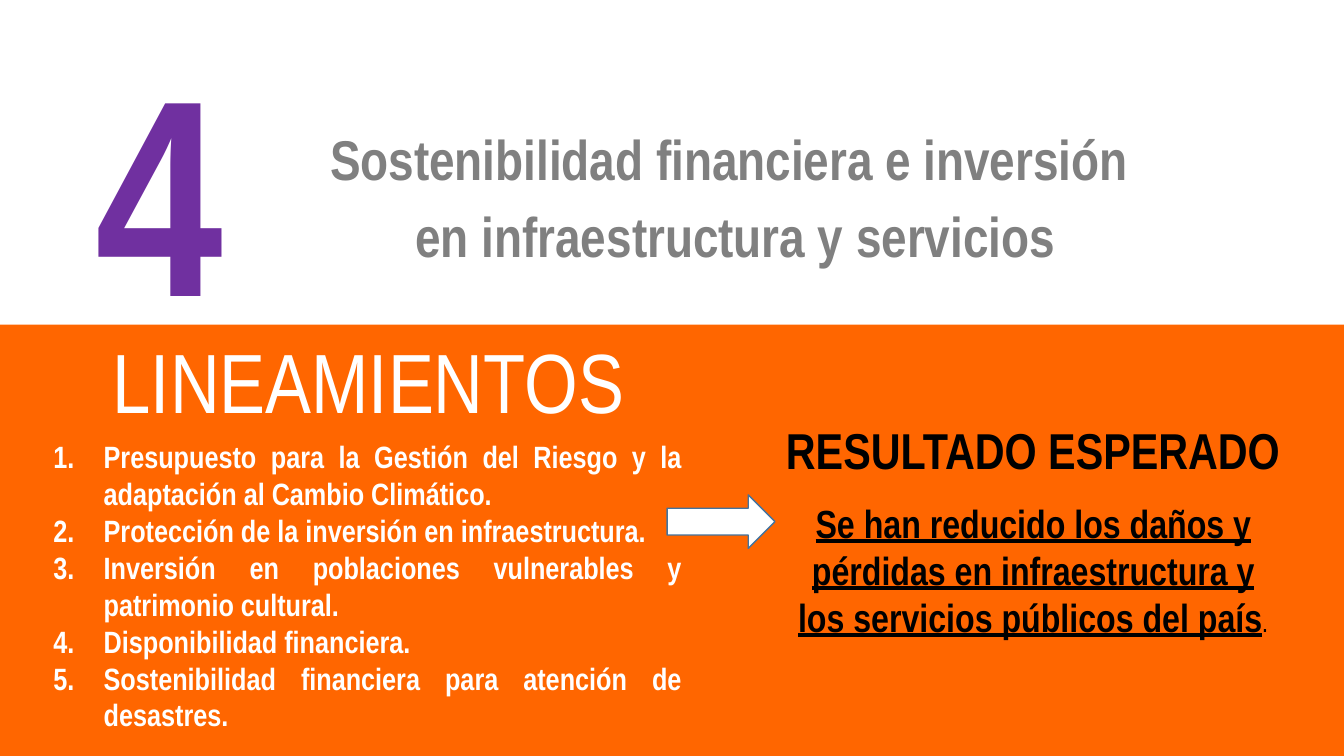
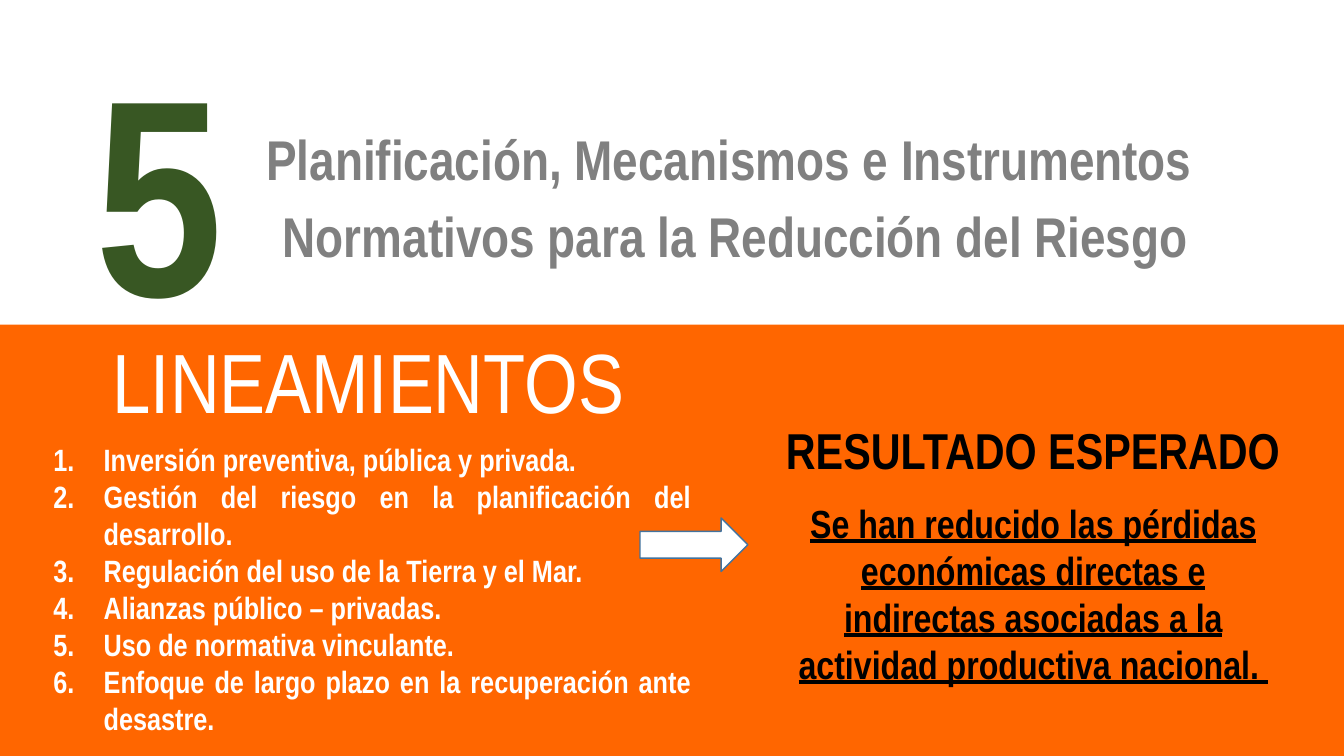
from lxml import etree
from pptx import Presentation
from pptx.dml.color import RGBColor
from pptx.enum.shapes import MSO_SHAPE
from pptx.enum.text import PP_ALIGN
from pptx.oxml.ns import qn
from pptx.util import Pt

RECT = MSO_SHAPE.RECTANGLE
ARROW = MSO_SHAPE.RIGHT_ARROW
LEFT, CENTER, JUSTIFY = PP_ALIGN.LEFT, PP_ALIGN.CENTER, PP_ALIGN.JUSTIFY
FONT = "Arial Narrow"
WHITE, BLACK, GRAY = "FFFFFF", "000000", "808080"
ORANGE, BLUE = "FF6600", "43739E"
WIDE, HIGH, SPLIT = 960, 540, 232

SLIDES = [
    {
        "digit": "4",
        "color": "7030A0",
        "title": ["Sostenibilidad financiera e inversión ",
                  "en infraestructura y servicios"],
        "width": 600,
        "items": ["Presupuesto para la Gestión del Riesgo y la adaptación al Cambio Climático.",
                  "Protección de la inversión en infraestructura.",
                  "Inversión en poblaciones vulnerables y patrimonio cultural.",
                  "Disponibilidad financiera.",
                  "Sostenibilidad financiera para atención de desastres."],
        "list": (31, 77, 463, 220),
        "arrow": (476.6, 121.5),
        "result": "Se han reducido los daños y pérdidas en infraestructura y los servicios públicos del país",
        "stop": ".",
        "tall": 191.5,
    },
    {
        "digit": "5",
        "color": "385723",
        "title": ["Planificación, Mecanismos e Instrumentos ",
                  "Normativos para la Reducción del Riesgo"],
        "width": 692,
        "items": ["Inversión preventiva, pública y privada.",
                  "Gestión del riesgo en la planificación del desarrollo.",
                  "Regulación del uso de la Tierra y el Mar.",
                  "Alianzas público – privadas.",
                  "Uso de normativa vinculante.",
                  "Enfoque de largo plazo en la recuperación ante desastre."],
        "list": (31, 79.5, 469.5, 220),
        "arrow": (457.2, 138),
        "result": "Se han reducido las pérdidas económicas directas e indirectas asociadas a la actividad productiva nacional. ",
        "stop": "",
        "tall": 225.4,
    },
]


def rgb(code):
    return RGBColor.from_string(code)


def style(run, size, color, bold=True, under=False):
    font = run.font
    font.name, font.size = FONT, Pt(size)
    font.bold, font.underline = bold, under
    font.color.rgb = rgb(color)


def add_text(slide, box, lines, size, color, bold=True, align=LEFT, wrap=True):
    frame = slide.shapes.add_textbox(*map(Pt, box)).text_frame
    frame.word_wrap = wrap
    frame.text = "\n".join(lines)
    for para in frame.paragraphs:
        para.alignment = align
        for run in para.runs:
            style(run, size, color, bold)
    return frame.paragraphs


def add_block(slide, kind, box, fill, line=None):
    shape = slide.shapes.add_shape(kind, *map(Pt, box))
    shape.shadow.inherit = False
    shape.fill.solid()
    shape.fill.fore_color.rgb = rgb(fill)
    if line:
        shape.line.color.rgb = rgb(line)
        shape.line.width = Pt(1)
    else:
        shape.line.fill.background()


def number(para):
    props = para._p.get_or_add_pPr()
    props.set("marL", str(Pt(36)))
    props.set("indent", str(-Pt(36)))
    etree.SubElement(props, qn("a:buFont"), typeface="+mj-lt")
    etree.SubElement(props, qn("a:buAutoNum"), type="arabicPeriod")


def add_head(slide, box, data):
    x, y, w, h = box
    add_text(slide, (x + 61, y + 8, 65.5, 250), [data["digit"]], 200, data["color"])
    wide = data["width"]
    spot = (x + 525.3 - wide / 2, y + 78, wide, 114)
    for para in add_text(slide, spot, data["title"], 40, GRAY, align=CENTER, wrap=False):
        para.line_spacing = 1.15


def add_result(slide, box, data):
    head, body = add_text(slide, box, ["RESULTADO ESPERADO", data["result"]],
                          36, BLACK, align=CENTER)
    head.space_after = Pt(14)
    style(body.runs[0], 28, BLACK, under=True)
    if data["stop"]:
        run = body.add_run()
        run.text = data["stop"]
        style(run, 20, BLACK, bold=False)


def add_body(slide, box, data):
    x, y, w, h = box
    add_block(slide, RECT, box, ORANGE)
    add_result(slide, (x + 553.7, y + 64, 368.6, data["tall"]), data)
    add_text(slide, (x + 73.4, y, 385, 80), ["LINEAMIENTOS"], 60, WHITE, bold=False)
    left, top, wide, tall = data["list"]
    for para in add_text(slide, (x + left, y + top, wide, tall), data["items"],
                         22, WHITE, align=JUSTIFY):
        number(para)
    left, top = data["arrow"]
    add_block(slide, ARROW, (x + left, y + top, 77, 38.2), WHITE, BLUE)


def main():
    deck = Presentation()
    deck.slide_width, deck.slide_height = Pt(WIDE), Pt(HIGH)
    for data in SLIDES:
        slide = deck.slides.add_slide(deck.slide_layouts[6])
        add_head(slide, (0, 0, WIDE, SPLIT), data)
        add_body(slide, (0, SPLIT, WIDE, HIGH - SPLIT), data)
    deck.save("out.pptx")


if __name__ == "__main__":
    main()
